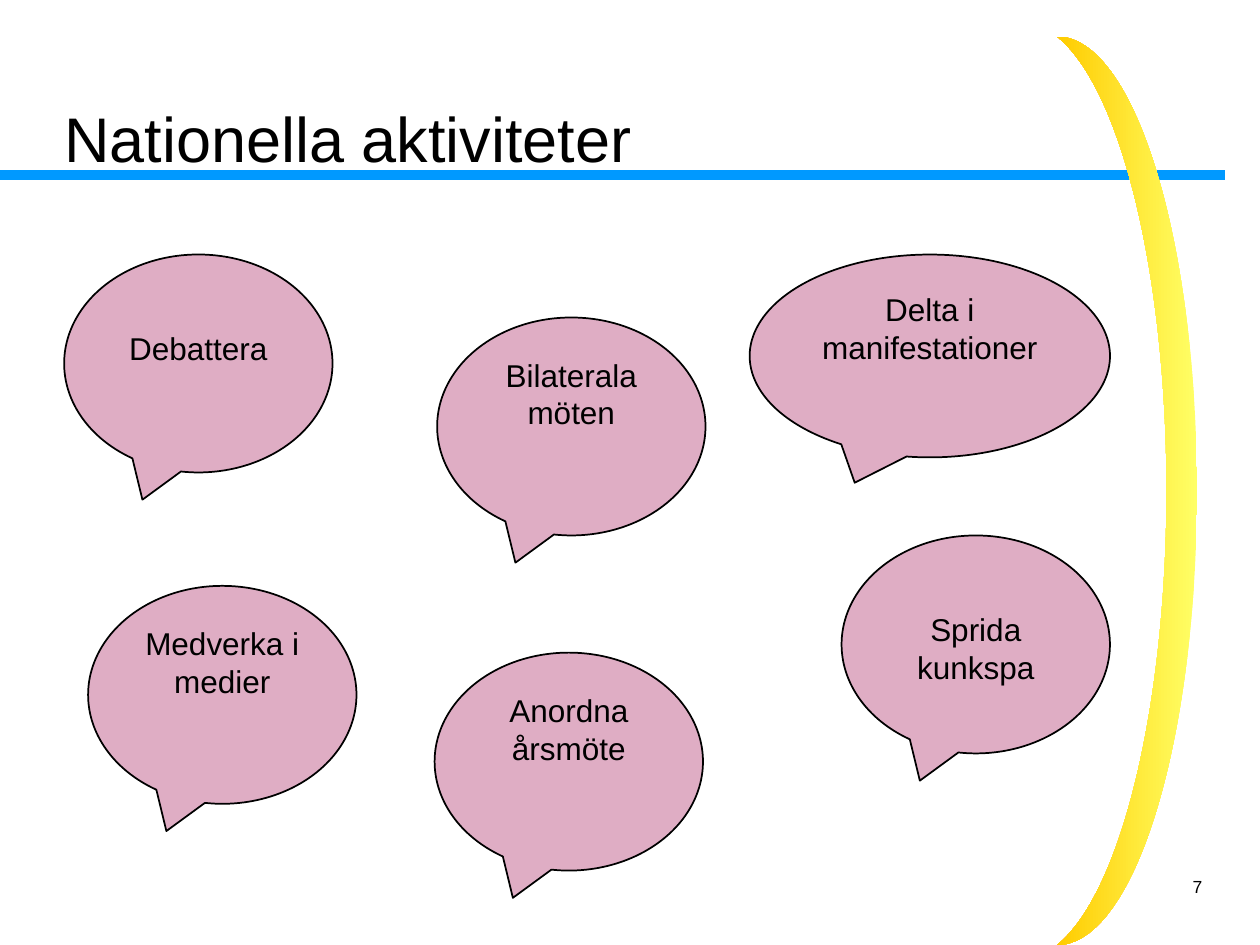
from lxml.etree import SubElement
from pptx import Presentation
from pptx.dml.color import RGBColor
from pptx.enum.shapes import MSO_CONNECTOR, MSO_SHAPE
from pptx.enum.text import MSO_ANCHOR, MSO_AUTO_SIZE, PP_ALIGN
from pptx.oxml.ns import qn
from pptx.util import Pt

BLACK = RGBColor(0x00, 0x00, 0x00)
BLUE = RGBColor(0x00, 0x99, 0xFF)
PINK = RGBColor(0xDF, 0xAD, 0xC4)
LIGHT_YELLOW = RGBColor(0xFF, 0xFF, 0x66)
GOLD = RGBColor(0xFF, 0xCC, 0x00)

BUBBLE_WIDTH, BUBBLE_HEIGHT = 153.36, 124.56
TOP_MARGIN = 3.6
LOWERED_MARGIN = 24.3  # one text line further down

# text, left, top, width, height, top margin
BUBBLES = [
    ("Sprida kunkspa", 480.96, 306, BUBBLE_WIDTH, BUBBLE_HEIGHT, LOWERED_MARGIN),
    ("Debattera", 36.72, 145.44, BUBBLE_WIDTH, BUBBLE_HEIGHT, LOWERED_MARGIN),
    ("Medverka i medier", 50.4, 334.8, BUBBLE_WIDTH, BUBBLE_HEIGHT, TOP_MARGIN),
    ("Anordna årsmöte", 248.4, 372.96, BUBBLE_WIDTH, BUBBLE_HEIGHT, TOP_MARGIN),
    ("Delta i manifestationer", 428.4, 145.44, 205.92, 115.92, TOP_MARGIN),
    ("Bilaterala möten", 249.84, 181.44, BUBBLE_WIDTH, BUBBLE_HEIGHT, TOP_MARGIN),
]


def write_text(shape, text, size, align, anchor=MSO_ANCHOR.TOP, wrap=True,
               margins=(7.2, TOP_MARGIN, 7.2, 3.6), line_spacing=None):
    frame = shape.text_frame
    frame.word_wrap = wrap
    frame.auto_size = MSO_AUTO_SIZE.NONE
    frame.vertical_anchor = anchor
    (frame.margin_left, frame.margin_top,
     frame.margin_right, frame.margin_bottom) = map(Pt, margins)
    paragraph = frame.paragraphs[0]
    paragraph.alignment = align
    if line_spacing:
        paragraph.line_spacing = Pt(line_spacing)
    run = paragraph.add_run()
    run.text = text
    run.font.name = "Arial"
    run.font.size = Pt(size)
    run.font.color.rgb = BLACK


def add_header(slide, left, top, width, height):
    """Title resting on the blue rule at the bottom of its box."""
    bottom = Pt(top + height)
    rule = slide.shapes.add_connector(MSO_CONNECTOR.STRAIGHT, 0, bottom, Pt(700), bottom)
    rule.line.color.rgb = BLUE
    rule.line.width = Pt(6)
    SubElement(rule._element.spPr, qn("a:effectLst"))

    title = slide.shapes.title
    title.left, title.top, title.width, title.height = map(Pt, (left, top, width, height))
    write_text(title, "Nationella aktiviteter", 36, PP_ALIGN.LEFT,
               anchor=MSO_ANCHOR.BOTTOM, margins=(0, 0, 0, 0), line_spacing=36)


def add_crescent(slide, left, top, width, height):
    moon = slide.shapes.add_shape(MSO_SHAPE.MOON, Pt(left), Pt(top), Pt(width), Pt(height))
    moon.shadow.inherit = False
    moon.adjustments[0] = 0.218
    moon._element.spPr.find(qn("a:xfrm")).set("flipH", "1")
    moon.fill.gradient()
    moon.fill.gradient_angle = 0
    for stop, color in zip(moon.fill.gradient_stops, (LIGHT_YELLOW, GOLD)):
        stop.color.rgb = color
    moon.line.fill.background()


def add_page_number(slide, left, top, width, height):
    box = slide.shapes.add_textbox(Pt(left), Pt(top), Pt(width), Pt(height))
    write_text(box, "7", 10, PP_ALIGN.RIGHT, wrap=False)


def add_bubble(slide, text, left, top, width, height, top_margin):
    bubble = slide.shapes.add_shape(MSO_SHAPE.OVAL_CALLOUT,
                                    Pt(left), Pt(top), Pt(width), Pt(height))
    bubble.shadow.inherit = False
    bubble.fill.solid()
    bubble.fill.fore_color.rgb = PINK
    bubble.line.color.rgb = BLACK
    bubble.line.width = Pt(1)
    write_text(bubble, text, 18, PP_ALIGN.CENTER, margins=(7.2, top_margin, 7.2, 3.6))


def main():
    presentation = Presentation()
    presentation.slide_width, presentation.slide_height = Pt(720), Pt(540)
    slide = presentation.slides.add_slide(presentation.slide_layouts[5])
    add_header(slide, 36.72, 12.24, 525.6, 87.84)
    add_page_number(slide, 667.44, 496.8, 26.64, 18.72)
    add_crescent(slide, 604.08, 20.88, 79.92, 519.12)
    for bubble in BUBBLES:
        add_bubble(slide, *bubble)
    presentation.save("out.pptx")


if __name__ == "__main__":
    main()
